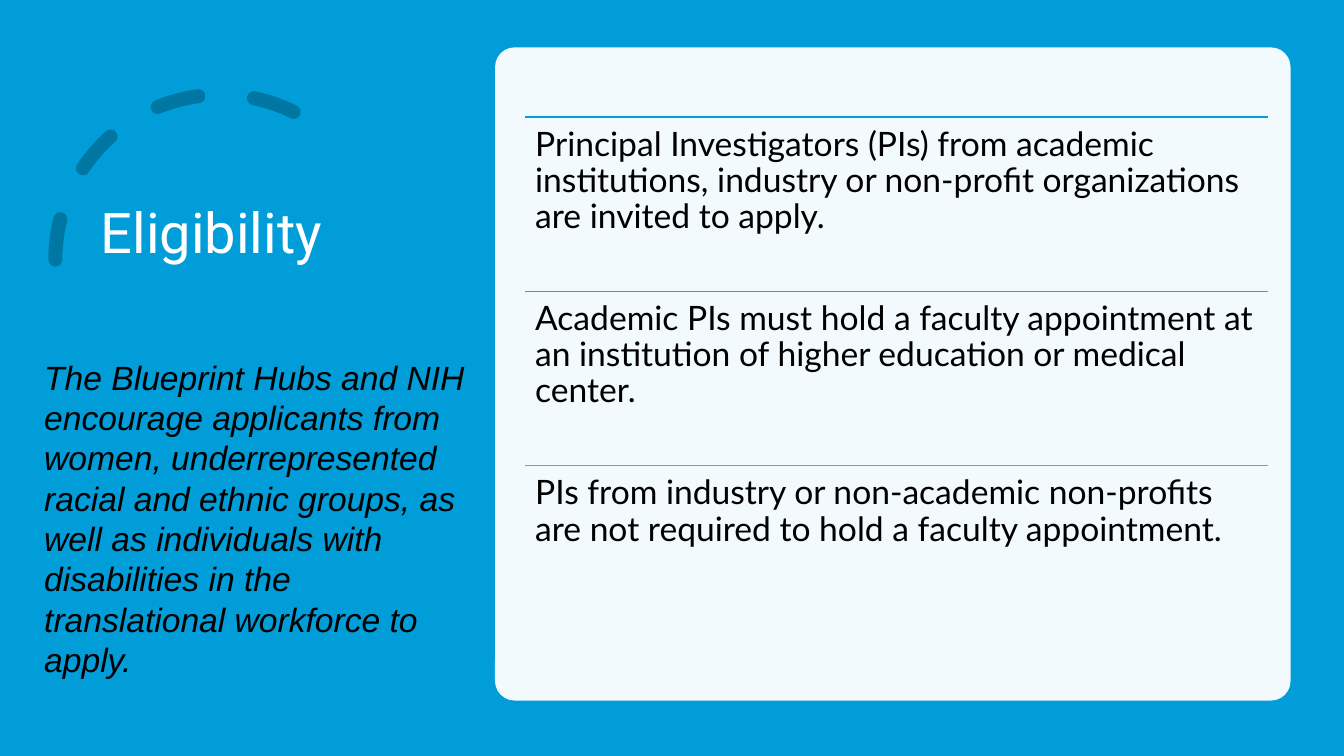
from lxml import etree
from pptx import Presentation
from pptx.dml.color import RGBColor
from pptx.enum.dml import MSO_LINE
from pptx.enum.shapes import MSO_CONNECTOR, MSO_SHAPE
from pptx.enum.text import MSO_ANCHOR, MSO_AUTO_SIZE, PP_ALIGN
from pptx.oxml.ns import qn
from pptx.util import Inches, Pt

RECTANGLE = MSO_SHAPE.RECTANGLE
ROUNDED = MSO_SHAPE.ROUNDED_RECTANGLE
ARC = MSO_SHAPE.ARC
STRAIGHT = MSO_CONNECTOR.STRAIGHT
DASH = MSO_LINE.DASH
LEFT = PP_ALIGN.LEFT
TOP = MSO_ANCHOR.TOP
MIDDLE = MSO_ANCHOR.MIDDLE
NO_FIT = MSO_AUTO_SIZE.NONE

COLORS = {
    "backdrop": "009DD9",
    "arc": "0076A3",
    "white": "FFFFFF",
    "black": "000000",
}
RULES = [
    ("009DD9", "Principal Investigators (PIs) from academic institutions, "
     "industry or non-profit organizations are invited to apply."),
    ("05B7D9", "Academic PIs must hold a faculty appointment at an "
     "institution of higher education or medical center."),
    ("0BD0D9", "PIs from industry or non-academic non-profits are not "
     "required to hold a faculty appointment."),
]
ENCOURAGEMENT = (
    "The Blueprint Hubs and NIH encourage applicants from women, "
    "underrepresented racial and ethnic groups, as well as individuals with "
    "disabilities in the translational workforce to apply."
)
RULE_LEFT, RULE_TOP, RULE_WIDTH, RULE_HEIGHT = 5.21, 1.16, 7.37, 1.73


def rgb(value):
    return RGBColor.from_string(value)


def inches(*lengths):
    return [Inches(length) for length in lengths]


def add_panel(page, kind, place, color):
    panel = page.shapes.add_shape(kind, *inches(*place))
    panel.shadow.inherit = False
    panel.fill.solid()
    panel.fill.fore_color.rgb = rgb(color)
    panel.line.fill.background()
    return panel


def set_opacity(shape, percent):
    color = shape.element.spPr.find(qn("a:solidFill"))[0]
    etree.SubElement(color, qn("a:alpha")).set("val", str(percent * 1000))


def add_dashed_arc(page):
    arc = page.shapes.add_shape(ARC, *inches(0.55, 0.94, 3.27, 3.27))
    arc.shadow.inherit = False
    arc.adjustments[0] = 146.13
    arc.adjustments[1] = 0
    arc.fill.background()
    arc.line.color.rgb = rgb(COLORS["arc"])
    arc.line.width = Pt(10)
    arc.line.dash_style = DASH
    properties = arc.element.spPr
    properties.find(qn("a:xfrm")).set("flipH", "1")
    properties.find(qn("a:ln")).set("cap", "rnd")


def write(box, text, font, size, color, anchor=TOP, spacing=1.0, italic=False):
    frame = box.text_frame
    frame.word_wrap = True
    frame.auto_size = NO_FIT
    frame.vertical_anchor = anchor
    para = frame.paragraphs[0]
    para.alignment = LEFT
    para.line_spacing = spacing
    span = para.add_run()
    span.text = text
    span.font.name = font
    span.font.size = Pt(size)
    span.font.italic = italic
    span.font.color.rgb = rgb(color)


def place_title(page):
    title = page.shapes.title
    title.left, title.top, title.width, title.height = inches(0.9, 0.7, 3.23, 3.27)
    write(title, "Eligibility", "Roboto", 40, COLORS["white"], MIDDLE, 0.9)
    page.shapes.element.append(title.element)


def add_rule(group, top, color, text):
    line = group.shapes.add_connector(
        STRAIGHT, *inches(RULE_LEFT, top, RULE_LEFT + RULE_WIDTH, top))
    line.line.color.rgb = rgb(color)
    line.line.width = Pt(1)
    etree.SubElement(line.element.spPr, qn("a:effectLst"))
    box = group.shapes.add_textbox(
        *inches(RULE_LEFT, top, RULE_WIDTH, RULE_HEIGHT))
    frame = box.text_frame
    frame.margin_left = frame.margin_right = Inches(0.1)
    frame.margin_top = frame.margin_bottom = Inches(0.1)
    write(box, text, "Lato", 24, COLORS["black"], spacing=0.9)


def main():
    deck = Presentation()
    deck.slide_width, deck.slide_height = inches(13.33, 7.5)
    page = deck.slides.add_slide(deck.slide_layouts[5])

    add_panel(page, RECTANGLE, (0, 0, 13.33, 7.5), COLORS["backdrop"])
    add_dashed_arc(page)
    place_title(page)

    card = add_panel(page, ROUNDED, (4.91, 0.47, 7.89, 6.48), COLORS["white"])
    card.adjustments[0] = 0.03
    set_opacity(card, 95)

    group = page.shapes.add_group_shape()
    for index, (color, text) in enumerate(RULES):
        add_rule(group, RULE_TOP + index * RULE_HEIGHT, color, text)

    note = page.shapes.add_textbox(*inches(0.34, 3.49, 4.41, 3.33))
    write(note, ENCOURAGEMENT, "Arial", 24, COLORS["black"], italic=True)

    deck.save("out.pptx")


if __name__ == "__main__":
    main()
